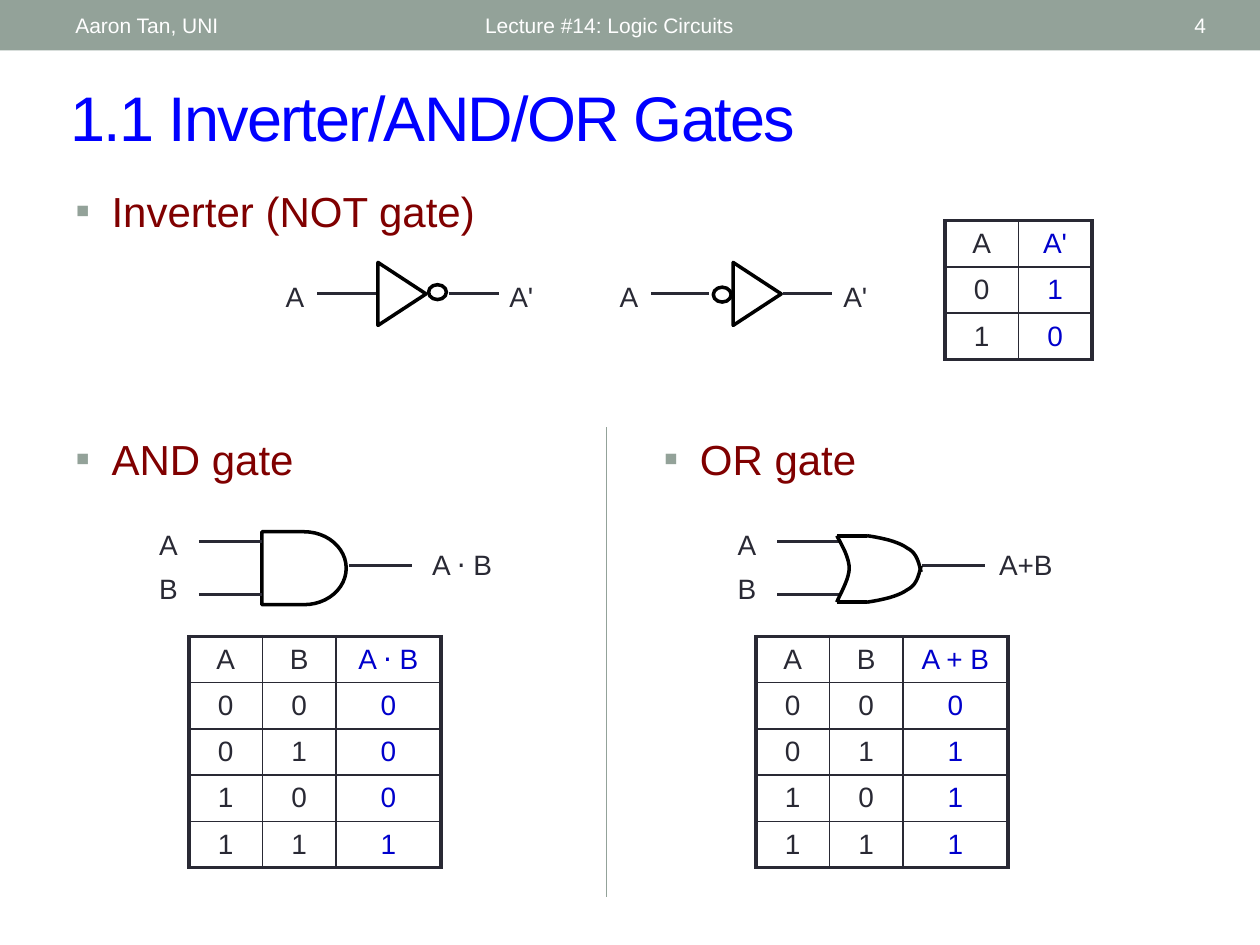
from pptx import Presentation
from pptx.dml.color import RGBColor
from pptx.enum.shapes import MSO_CONNECTOR as Connector, MSO_SHAPE as Shape
from pptx.enum.text import MSO_ANCHOR as Anchor, PP_ALIGN as Align
from pptx.oxml.ns import qn
from pptx.util import Cm, Pt
from lxml.etree import SubElement

COLORS = {
    "sage": "93A299", "title": "0000FF", "heading": "800000", "ink": "292934",
    "result": "0000CC", "gate": "000000", "white": "FFFFFF",
}
FORMATS = {
    "header": {"size": Pt(12), "name": "Arial"},
    "title": {"size": Pt(36), "name": "Arial"},
    "heading": {"size": Pt(24), "name": "Arial"},
    "label": {"size": Pt(16), "name": "Arial"},
}
THICK, THIN = 2.25, 1
ROW_HEIGHT = 0.93
BIT_WIDTH, RESULT_WIDTH = 1.48, 2.12
NOT_AXIS, OR_AXIS = 5.92, 11.47
INPUT_LEVELS = (10.92, 11.99)
OUTPUT_LEVEL = 11.4


def color(name):
    return RGBColor.from_string(COLORS[name])


def write(para, text, style, shade, align=Align.LEFT):
    para.alignment = align
    span = para.add_run()
    span.text = text
    for key, value in FORMATS[style].items():
        setattr(span.font, key, value)
    span.font.color.rgb = color(shade)
    return span


def add_text(page, place, lines, style, shade, align=Align.LEFT, anchor=Anchor.TOP):
    frame = page.shapes.add_textbox(*map(Cm, place)).text_frame
    frame.word_wrap = True
    frame.vertical_anchor = anchor
    for index, line in enumerate(lines):
        para = frame.add_paragraph() if index else frame.paragraphs[0]
        if index:
            para.space_before = Pt(5.5)
        write(para, line, style, shade, align)
    return frame


def add_heading(page, left, top, text):
    frame = add_text(page, (left, top, 11.23, 1.27), [text], "heading", "heading")
    props = frame.paragraphs[0]._p.get_or_add_pPr()
    props.set("marL", str(Cm(0.73)))
    props.set("indent", str(-Cm(0.73)))
    shade = SubElement(props, qn("a:buClr"))
    SubElement(shade, qn("a:srgbClr"), val=COLORS["sage"])
    SubElement(props, qn("a:buFont"), typeface="Arial")
    SubElement(props, qn("a:buChar"), char="▪")


def add_line(page, start, end, shade="ink", width=1.5):
    line = page.shapes.add_connector(Connector.STRAIGHT, *map(Cm, start + end))
    line.line.color.rgb = color(shade)
    line.line.width = Pt(width)
    SubElement(line._element.spPr, qn("a:effectLst"))


def add_wire(page, left, level, length):
    add_line(page, (left, level), (left + length, level))


def outline(shape):
    shape.shadow.inherit = False
    shape.fill.background()
    shape.line.color.rgb = color("gate")
    shape.line.width = Pt(2)


def add_gate_shape(page, kind, place, rotation=0):
    shape = page.shapes.add_shape(kind, *map(Cm, place))
    shape.rotation = rotation
    outline(shape)


def bezier(points, steps=10):
    for step in range(1, steps + 1):
        t = step / steps
        weights = ((1 - t) ** 3, 3 * t * (1 - t) ** 2, 3 * t * t * (1 - t), t ** 3)
        yield tuple(Cm(sum(w * point[axis] for w, point in zip(weights, points)))
                    for axis in (0, 1))


def add_curve(page, points):
    builder = page.shapes.build_freeform(*map(Cm, points[0]), scale=1.0)
    for first in range(0, len(points) - 1, 3):
        builder.add_line_segments(list(bezier(points[first:first + 4])), close=False)
    outline(builder.convert_to_shape())


def add_or_body(page):
    back = [(16.87, 10.8), (16.99, 11.02), (17.12, 11.25), (17.12, 11.46),
            (17.12, 11.68), (16.92, 12.01), (16.87, 12.14)]
    upper = [(17.48, 10.8), (17.81, 10.85), (18.11, 10.92), (18.29, 11.05),
             (18.49, 11.15), (18.52, 11.35), (18.57, 11.53)]
    lower = [(x, 2 * OR_AXIS - y) for x, y in upper]
    for curve in (back, upper, lower):
        add_curve(page, curve)
    for level in (10.8, 12.14):
        add_line(page, (16.87, level), (17.48, level), "gate", 2)


def add_inverter(page, left, triangle, bubble, bubble_top):
    add_gate_shape(page, Shape.FLOWCHART_MERGE, (left + triangle, 5.44, 1.27, 0.97), 270)
    add_gate_shape(page, Shape.OVAL, (left + bubble, bubble_top, 0.36, 0.3))
    add_wire(page, left, NOT_AXIS, 1.17)
    add_wire(page, left + 2.66, NOT_AXIS, 0.99)
    add_text(page, (left - 0.89, 5.51, 0.84, 0.94), ["A"], "label", "ink", Align.RIGHT)
    add_text(page, (left + 3.62, 5.51, 1.07, 0.94), ["A'"], "label", "ink")


def add_gate_wiring(page, left, output_left, label_left, label):
    for level in INPUT_LEVELS:
        add_wire(page, left, level, 1.27)
    add_wire(page, output_left, OUTPUT_LEVEL, 1.27)
    add_text(page, (left - 1.05, 10.52, 0.84, 1.83), ["A", "B"], "label", "ink", Align.RIGHT)
    add_text(page, (label_left, 10.92, 2.11, 0.94), [label], "label", "ink")


def set_border(cell, side, width):
    border = SubElement(cell._tc.get_or_add_tcPr(), qn(f"a:{side}"), w=str(Pt(width)))
    fill = SubElement(border, qn("a:solidFill"))
    SubElement(fill, qn("a:srgbClr"), val=COLORS["ink"])


def add_truth_table(page, left, top, widths, rows):
    size = (sum(widths), ROW_HEIGHT * len(rows))
    table = page.shapes.add_table(len(rows), len(widths), *map(Cm, (left, top) + size)).table
    table.first_row = table.horz_banding = False
    for column, width in zip(table.columns, widths):
        column.width = Cm(width)
    last_row, last_column = len(rows) - 1, len(widths) - 1
    for y, values in enumerate(rows):
        table.rows[y].height = Cm(ROW_HEIGHT)
        for x, value in enumerate(values):
            cell = table.cell(y, x)
            cell.vertical_anchor = Anchor.MIDDLE
            edges = {"lnL": x == 0, "lnR": x == last_column,
                     "lnT": y == 0, "lnB": y == last_row}
            for side, outer in edges.items():
                set_border(cell, side, THICK if outer else THIN)
            cell.fill.background()
            shade = "result" if x == last_column else "ink"
            write(cell.text_frame.paragraphs[0], value, "label", shade, Align.CENTER)


def add_header(page):
    bar = page.shapes.add_shape(Shape.RECTANGLE, 0, 0, Cm(25.4), Cm(1.02))
    bar.shadow.inherit = False
    bar.fill.solid()
    bar.fill.fore_color.rgb = color("sage")
    bar.line.fill.background()
    for left, width, text, align in (
        (1.27, 8.05, "Aaron Tan, UNI", Align.LEFT),
        (9.53, 11.43, "Lecture #14: Logic Circuits", Align.LEFT),
        (22.15, 2.41, "4", Align.RIGHT),
    ):
        add_text(page, (left, 0.05, width, 0.91), [text], "header", "white", align, Anchor.MIDDLE)


def add_title(page, text):
    frame = add_text(page, (1.17, 1.45, 23.04, 1.78), [text], "title", "title",
                     anchor=Anchor.MIDDLE)
    frame.paragraphs[0].runs[0]._r.get_or_add_rPr().set("spc", "-100")


def main():
    deck = Presentation()
    deck.slide_width, deck.slide_height = Cm(25.4), Cm(19.05)
    page = deck.slides.add_slide(deck.slide_layouts[6])
    add_header(page)
    add_title(page, "1.1 Inverter/AND/OR Gates")

    add_heading(page, 1.27, 3.61, "Inverter (NOT gate)")
    add_inverter(page, 6.4, 1.07, 2.24, 5.74)
    add_inverter(page, 13.13, 1.5, 1.25, 5.79)
    add_truth_table(page, 19.05, 4.45, (BIT_WIDTH, BIT_WIDTH), [("A", "A'"), "01", "10"])

    add_heading(page, 1.27, 8.61, "AND gate")
    add_gate_shape(page, Shape.FLOWCHART_DELAY, (5.28, 10.72, 1.7, 1.47))
    add_gate_wiring(page, 4.01, 7.04, 8.46, "A ⋅ B")

    add_heading(page, 13.13, 8.61, "OR gate")
    add_gate_wiring(page, 15.67, 18.59, 19.89, "A+B")
    add_or_body(page)

    widths = (BIT_WIDTH, BIT_WIDTH, RESULT_WIDTH)
    for left, name, results in ((3.81, "A ⋅ B", "0001"), (15.24, "A + B", "0111")):
        inputs = ("00", "01", "10", "11")
        rows = [("A", "B", name)] + [bits + result for bits, result in zip(inputs, results)]
        add_truth_table(page, left, 12.83, widths, rows)
    add_line(page, (12.22, 8.61), (12.22, 18.08), "sage", 0.75)
    deck.save("out.pptx")


if __name__ == "__main__":
    main()
